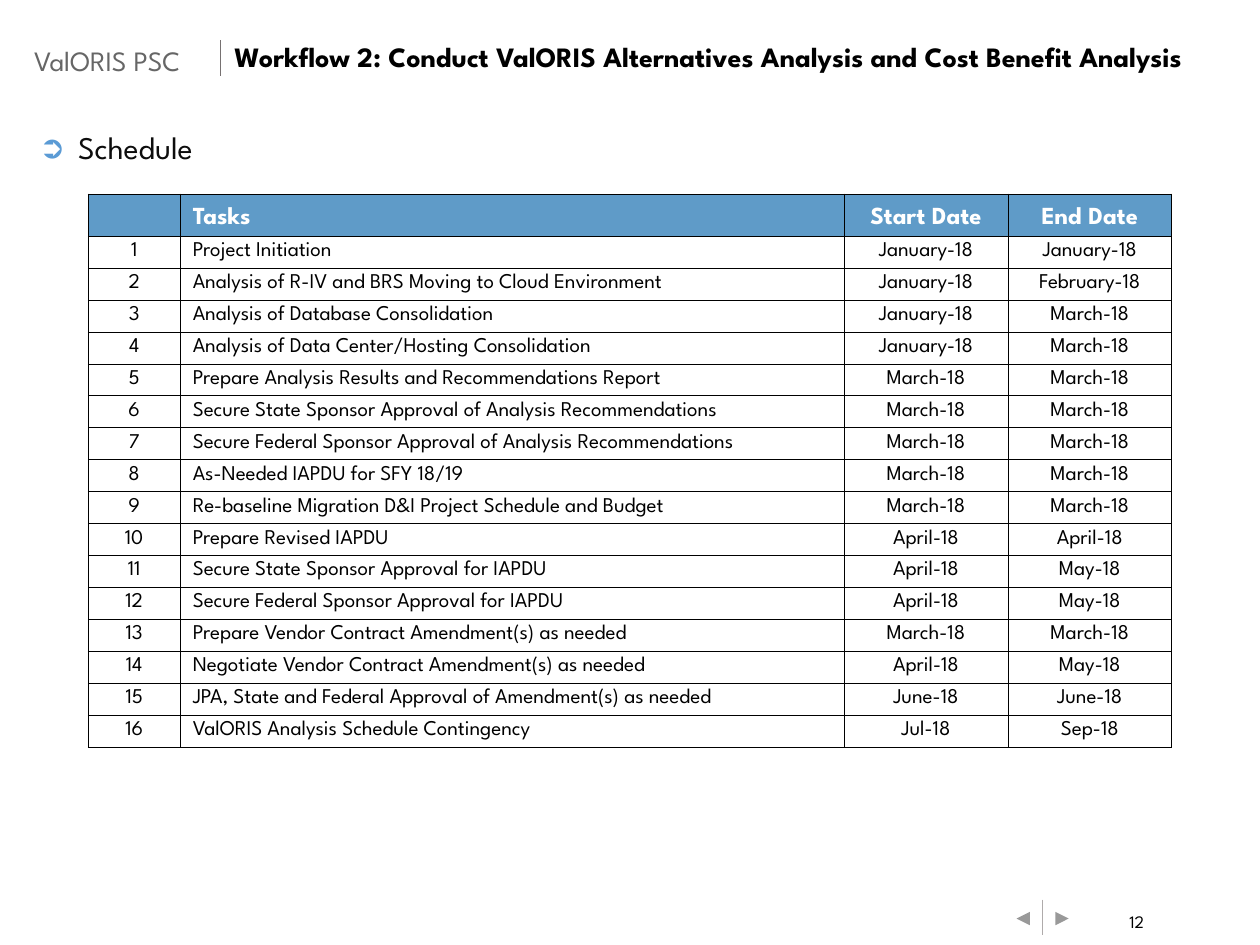
from dataclasses import dataclass

import pptx
import pptx.dml.color
import pptx.enum.shapes
import pptx.enum.text
import pptx.oxml.ns
import pptx.util
from lxml import etree

Inches, Pt = pptx.util.Inches, pptx.util.Pt
ALIGN = pptx.enum.text.PP_ALIGN
ANCHOR = pptx.enum.text.MSO_ANCHOR
AUTO_SIZE = pptx.enum.text.MSO_AUTO_SIZE
qn = pptx.oxml.ns.qn

FONT = "League Spartan"
COLORS = {
    "text": "000000",
    "body": "0D0D0D",
    "brand": "666666",
    "bullet": "5B9BD5",
    "header": "5F9BC8",
    "white": "FFFFFF",
    "nav_rule": "AFABAB",
    "title_rule": "767171",
}


@dataclass
class Style:
    size: float
    color: str
    bold: bool = False
    align: ALIGN = ALIGN.LEFT


@dataclass
class Rule:
    x: float
    top: float
    bottom: float
    color: str


@dataclass
class Task:
    name: str
    start: str
    end: str


BRAND = Style(16, "brand")
TITLE = Style(16, "text", True)
BODY = Style(18, "body")
PAGE = Style(10, "text", align=ALIGN.RIGHT)

RULES = [Rule(8.27, 7.14, 7.42, "nav_rule"), Rule(1.75, 0.32, 0.6, "title_rule")]
NAV_BUTTONS = {8.36: 0, 8.05: 180}  # left edge: rotation

HEADINGS = ["", "Tasks", "Start Date", "End Date"]
COLUMN_WIDTHS = [0.73, 5.27, 1.3, 1.3]
COLUMN_ALIGNS = [ALIGN.CENTER, ALIGN.LEFT, ALIGN.CENTER, ALIGN.CENTER]
HEADER_HEIGHT, TASKS_HEIGHT = 0.33, 4.06
TASK_MARGINS = {"margin_top": Inches(0.02), "margin_bottom": Inches(0.03)}
TASKS = [
    Task("Project Initiation", "January-18", "January-18"),
    Task("Analysis of R-IV and BRS Moving to Cloud Environment", "January-18", "February-18"),
    Task("Analysis of Database Consolidation", "January-18", "March-18"),
    Task("Analysis of Data Center/Hosting Consolidation", "January-18", "March-18"),
    Task("Prepare Analysis Results and Recommendations Report", "March-18", "March-18"),
    Task("Secure State Sponsor Approval of Analysis Recommendations", "March-18", "March-18"),
    Task("Secure Federal Sponsor Approval of Analysis Recommendations", "March-18", "March-18"),
    Task("As-Needed IAPDU for SFY 18/19", "March-18", "March-18"),
    Task("Re-baseline Migration D&I Project Schedule and Budget", "March-18", "March-18"),
    Task("Prepare Revised IAPDU", "April-18", "April-18"),
    Task("Secure State Sponsor Approval for IAPDU", "April-18", "May-18"),
    Task("Secure Federal Sponsor Approval for IAPDU", "April-18", "May-18"),
    Task("Prepare Vendor Contract Amendment(s) as needed", "March-18", "March-18"),
    Task("Negotiate Vendor Contract Amendment(s) as needed", "April-18", "May-18"),
    Task("JPA, State and Federal Approval of Amendment(s) as needed", "June-18", "June-18"),
    Task("ValORIS Analysis Schedule Contingency", "Jul-18", "Sep-18"),
]


def rgb(name: str) -> pptx.dml.color.RGBColor:
    return pptx.dml.color.RGBColor.from_string(COLORS[name])


def set_attributes(target, values: dict) -> None:
    for attribute, value in values.items():
        setattr(target, attribute, value)


def place(shape, left: float, top: float, width: float, height: float) -> None:
    box = {"left": left, "top": top, "width": width, "height": height}
    set_attributes(shape, {side: Inches(length) for side, length in box.items()})


def write(frame, text: str, style: Style, **spacing):
    paragraph = frame.paragraphs[0]
    set_attributes(paragraph, {"alignment": style.align, **spacing})
    if text:
        run = paragraph.add_run()
        run.text = text
        set_attributes(run.font, {"name": FONT, "size": Pt(style.size), "bold": style.bold})
        run.font.color.rgb = rgb(style.color)
    else:
        # An empty cell keeps the row's text size
        etree.SubElement(paragraph._p, qn("a:endParaRPr"), sz=str(style.size * 100))
    return paragraph


def add_bullet(paragraph, symbol: str, color: str, indent: float) -> None:
    properties = paragraph._p.get_or_add_pPr()
    properties.set("marL", str(Inches(indent)))
    properties.set("indent", str(-Inches(indent)))
    bullet_color = etree.SubElement(properties, qn("a:buClr"))
    etree.SubElement(bullet_color, qn("a:srgbClr"), val=COLORS[color])
    etree.SubElement(properties, qn("a:buChar"), char=symbol)


def add_rule(slide, rule: Rule) -> None:
    line = slide.shapes.add_connector(
        pptx.enum.shapes.MSO_CONNECTOR.STRAIGHT,
        Inches(rule.x), Inches(rule.top), Inches(rule.x), Inches(rule.bottom))
    line.line.color.rgb = rgb(rule.color)
    line.line.width = Pt(0.5)
    etree.SubElement(line._element.spPr, qn("a:effectLst"))


def add_nav_button(slide, left: float, rotation: float) -> None:
    button = slide.shapes.add_shape(
        pptx.enum.shapes.MSO_SHAPE.ACTION_BUTTON_FORWARD_OR_NEXT,
        Inches(left), Inches(7.2), Inches(0.14), Inches(0.18))
    button.rotation = rotation
    button.shadow.inherit = False
    button.fill.solid()
    button.fill.fore_color.rgb = rgb("white")
    button.line.fill.background()


def add_text(slide, box: tuple, text: str, style: Style, frame_values: dict) -> None:
    frame = slide.shapes.add_textbox(*map(Inches, box)).text_frame
    set_attributes(frame, {"auto_size": AUTO_SIZE.SHAPE_TO_FIT_TEXT, **frame_values})
    write(frame, text, style)


def fill_cell(cell, text: str, style: Style, fill: str, values: dict) -> None:
    properties = cell._tc.get_or_add_tcPr()
    for side in ("lnL", "lnR", "lnT", "lnB"):
        border = etree.SubElement(properties, qn(f"a:{side}"), w=str(Pt(0.5)))
        border_fill = etree.SubElement(border, qn("a:solidFill"))
        etree.SubElement(border_fill, qn("a:srgbClr"), val=COLORS["text"])
    cell.fill.solid()
    cell.fill.fore_color.rgb = rgb(fill)
    set_attributes(cell, values)
    write(cell.text_frame, text, style)


def add_schedule(slide, tasks: list[Task]) -> None:
    heights = [HEADER_HEIGHT] + [TASKS_HEIGHT / len(tasks)] * len(tasks)
    schedule = slide.shapes.add_table(
        len(heights), len(COLUMN_WIDTHS), Inches(0.7), Inches(1.54),
        Inches(sum(COLUMN_WIDTHS)), Inches(sum(heights))).table
    for column, width in zip(schedule.columns, COLUMN_WIDTHS):
        column.width = Inches(width)
    for row, height in zip(schedule.rows, heights):
        row.height = Inches(height)
    entries = [[str(n), task.name, task.start, task.end] for n, task in enumerate(tasks, 1)]
    for r, texts in enumerate([HEADINGS] + entries):
        for c, (text, align) in enumerate(zip(texts, COLUMN_ALIGNS)):
            if r == 0:
                look = Style(14, "white", True, align), "header", {"vertical_anchor": ANCHOR.BOTTOM}
            else:
                look = (Style(12, "text", False, align), "white",
                        {"vertical_anchor": ANCHOR.MIDDLE, **TASK_MARGINS})
            fill_cell(schedule.cell(r, c), text, *look)


def main() -> None:
    deck = pptx.Presentation()
    set_attributes(deck, {"slide_width": Inches(10), "slide_height": Inches(7.5)})
    slide = deck.slides.add_slide(deck.slide_layouts[1])
    flush = {"margin_left": 0, "margin_right": 0,
             "vertical_anchor": ANCHOR.MIDDLE, "word_wrap": True}

    # Page number and navigation
    add_text(slide, (8.84, 7.19, 0.32, 0.24), "12", PAGE, {
        "margin_left": Inches(0.08), "margin_right": Inches(0.08),
        "margin_top": Inches(0.04), "margin_bottom": Inches(0.04), "word_wrap": False})
    for left, rotation in NAV_BUTTONS.items():
        add_nav_button(slide, left, rotation)
    for rule in RULES:
        add_rule(slide, rule)

    # Heading
    add_text(slide, (0.27, 0.29, 2.39, 0.37), "ValORIS PSC", BRAND, flush)
    title = slide.shapes.title
    place(title, 1.86, 0.18, 8.04, 0.58)
    set_attributes(title.text_frame, {"auto_size": AUTO_SIZE.NONE, **flush})
    write(title.text_frame,
          "Workflow 2: Conduct ValORIS Alternatives Analysis and Cost Benefit Analysis",
          TITLE, line_spacing=0.8, space_before=Pt(10))

    # Bulleted topic
    body = slide.placeholders[1]
    place(body, 0.21, 1, 9.58, 5.73)
    body.text_frame.auto_size = AUTO_SIZE.NONE
    topic = write(body.text_frame, "Schedule", BODY, line_spacing=0.9, space_before=Pt(10))
    add_bullet(topic, "➲", "bullet", 0.31)

    # Schedule table
    add_schedule(slide, TASKS)
    deck.save("out.pptx")


if __name__ == "__main__":
    main()
